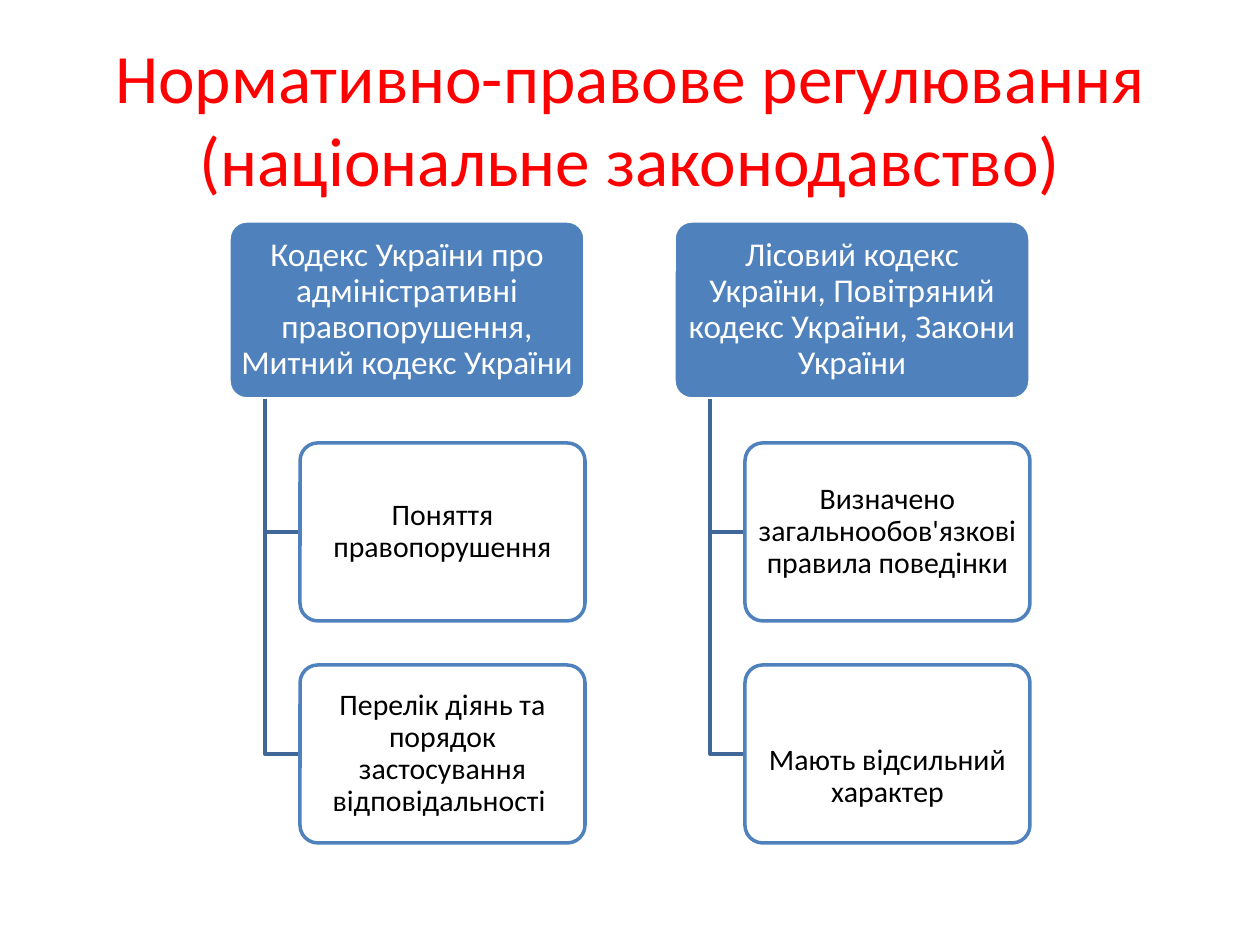
from dataclasses import dataclass

from lxml.etree import SubElement
from pptx import Presentation
from pptx.dml.color import RGBColor
from pptx.enum.shapes import MSO_SHAPE
from pptx.enum.text import MSO_ANCHOR, MSO_AUTO_SIZE, PP_ALIGN
from pptx.oxml.ns import qn
from pptx.util import Emu, Pt

EMU_PER_PX = 914400 / 126


@dataclass(frozen=True)
class Theme:
    font: str = "Calibri"
    red: RGBColor = RGBColor(0xFF, 0x00, 0x00)
    blue: RGBColor = RGBColor(0x4F, 0x81, 0xBD)
    dark_blue: RGBColor = RGBColor(0x3F, 0x67, 0x97)
    white: RGBColor = RGBColor(0xFF, 0xFF, 0xFF)
    black: RGBColor = RGBColor(0x00, 0x00, 0x00)
    title_size: float = 39.6
    head_size: int = 19
    item_size: int = 17
    line_width: int = 2


THEME = Theme()

TITLE = "Нормативно-правове регулювання\v(національне законодавство)"
# Each item: its text and the extra top inset that lowers it in its box.
BRANCHES = [
    ("Кодекс України про адміністративні правопорушення, Митний кодекс України",
     [("Поняття правопорушення", 0),
      ("Перелік діянь та порядок застосування відповідальності ", 0)]),
    ("Лісовий кодекс України, Повітряний кодекс України, Закони України",
     [("Визначено загальнообов'язкові правила поведінки", 0),
      ("Мають відсильний характер", 46)]),
]

LEFT, TOP = 229, 221
COLUMN_PITCH, ROW_PITCH = 445, 222
HEAD_WIDTH, ITEM_WIDTH, BOX_HEIGHT = 356, 285, 178
TRUNK_INDENT, ITEM_INDENT = 36, 71


def px(n):
    return Emu(round(n * EMU_PER_PX))


def format_text(tf, size, color):
    tf.word_wrap = True
    tf.auto_size = MSO_AUTO_SIZE.NONE
    tf.vertical_anchor = MSO_ANCHOR.MIDDLE
    for p in tf.paragraphs:
        p.alignment = PP_ALIGN.CENTER
        for r in p.runs:
            r.font.name = THEME.font
            r.font.size = Pt(size)
            r.font.color.rgb = color


def add_title(s, text):
    title = s.shapes.title
    title.left, title.top, title.width, title.height = map(px, (63, 38, 1134, 158))
    title.text_frame.text = text
    format_text(title.text_frame, THEME.title_size, THEME.red)


def add_box(s, x, y, width, text, size, fill, line, color, lowered=0):
    sp = s.shapes.add_shape(MSO_SHAPE.ROUNDED_RECTANGLE,
                            px(x), px(y), px(width), px(BOX_HEIGHT))
    sp.adjustments[0] = 0.1
    sp.shadow.inherit = False
    sp.fill.solid()
    sp.fill.fore_color.rgb = fill
    sp.line.color.rgb = line
    sp.line.width = Pt(THEME.line_width)
    tf = sp.text_frame
    tf.margin_left = tf.margin_right = px(5)
    tf.margin_top, tf.margin_bottom = px(3 + lowered), px(3)
    tf.text = text
    format_text(tf, size, color)
    tf.paragraphs[0].line_spacing = 0.9
    return sp


def set_opacity(sp, percent):
    color = sp.fill._xPr.find(qn("a:solidFill"))[0]
    SubElement(color, qn("a:alpha")).set("val", str(percent * 1000))


def add_elbow(s, x, top, end_x, end_y):
    """Draw an open line down from (x, top), then right to (end_x, end_y)."""
    builder = s.shapes.build_freeform(x, top, scale=EMU_PER_PX)
    builder.add_line_segments([(x, end_y), (end_x, end_y)], close=False)
    sp = builder.convert_to_shape()
    sp.shadow.inherit = False
    sp.fill.background()
    sp.line.color.rgb = THEME.dark_blue
    sp.line.width = Pt(THEME.line_width)


def add_branch(s, x, head, items):
    add_box(s, x, TOP, HEAD_WIDTH, head, THEME.head_size,
            THEME.blue, THEME.white, THEME.white)
    item_x = x + ITEM_INDENT
    for row, (text, lowered) in enumerate(items, start=1):
        y = TOP + row * ROW_PITCH
        add_elbow(s, x + TRUNK_INDENT, TOP + BOX_HEIGHT, item_x, y + BOX_HEIGHT // 2)
        box = add_box(s, item_x, y, ITEM_WIDTH, text, THEME.item_size,
                      THEME.white, THEME.blue, THEME.black, lowered)
        set_opacity(box, 90)


def main():
    prs = Presentation()
    prs.slide_width, prs.slide_height = px(1260), px(945)
    s = prs.slides.add_slide(prs.slide_layouts[5])
    add_title(s, TITLE)
    for column, (head, items) in enumerate(BRANCHES):
        add_branch(s, LEFT + column * COLUMN_PITCH, head, items)
    prs.save("out.pptx")


if __name__ == "__main__":
    main()
